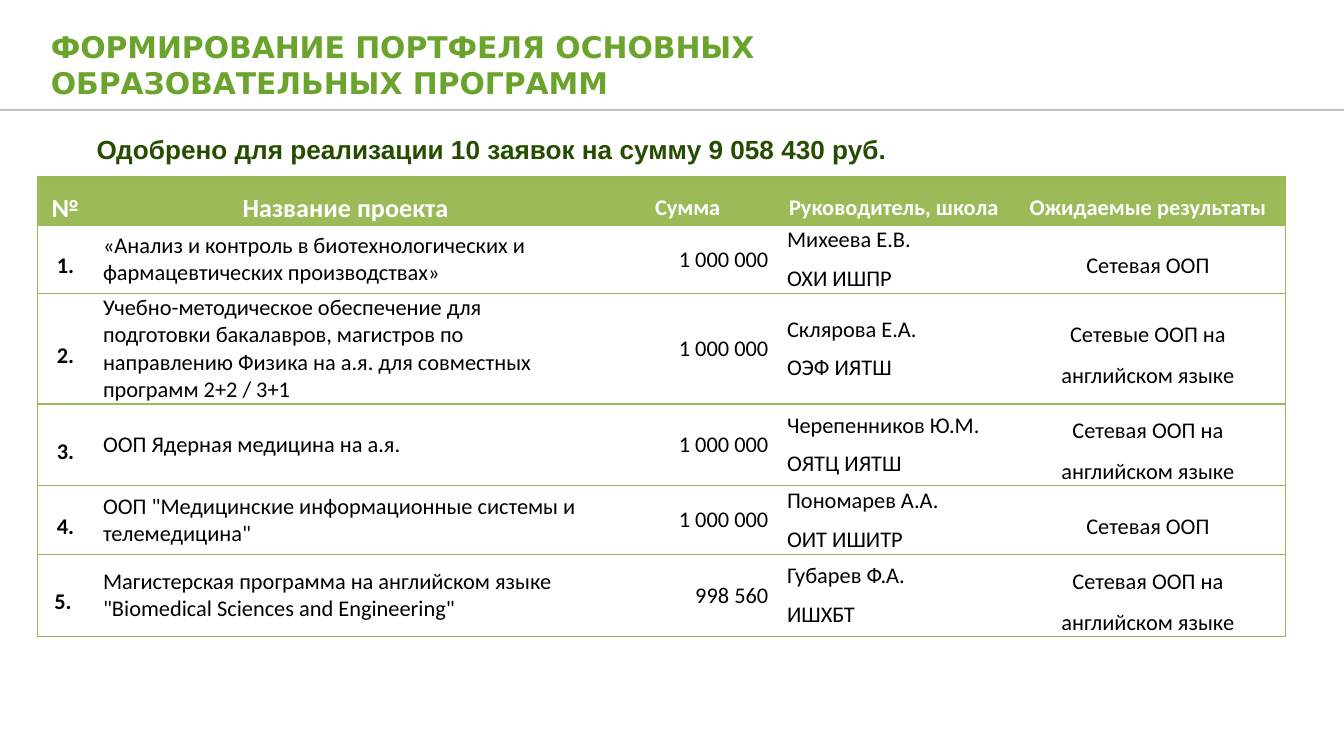
"""Build the slide listing the approved educational programme projects."""
import lxml.etree
import pptx
import pptx.dml.color
import pptx.enum.shapes
import pptx.enum.text
import pptx.oxml.ns
import pptx.util

color = pptx.dml.color.RGBColor.from_string
qn = pptx.oxml.ns.qn
ALIGN = pptx.enum.text.PP_ALIGN
MIDDLE = pptx.enum.text.MSO_ANCHOR.MIDDLE
BORDER = "98B955"


def add_span(para, text, size, font, hue, bold):
    span = para.add_run()
    span.text = text
    span.font.size = pptx.util.Pt(size)
    span.font.name = font
    span.font.bold = bold
    span.font.color.rgb = color(hue)


def add_border(cell, side, hue):
    line = lxml.etree.SubElement(cell._tc.get_or_add_tcPr(), qn("a:" + side))
    if hue:
        line.set("w", str(pptx.util.Pt(0.75)))
        fill = lxml.etree.SubElement(line, qn("a:solidFill"))
        lxml.etree.SubElement(fill, qn("a:srgbClr")).set("val", hue)
    else:
        lxml.etree.SubElement(line, qn("a:noFill"))


deck = pptx.Presentation()
deck.slide_width = pptx.util.Inches(10)
deck.slide_height = deck.slide_width * 9 // 16
percent = deck.slide_width / 100
page = deck.slides.add_slide(deck.slide_layouts[6])

headings = [
    ((2.8, 2.17, 69.3, 5.3), MIDDLE, 0, "ФОРМИРОВАНИЕ ПОРТФЕЛЯ ОСНОВНЫХ ОБРАЗОВАТЕЛЬНЫХ ПРОГРАММ",
     16, "DejaVu Sans", "6BA42C"),
    ((1.2, 9.45, 94.5, 3.4), pptx.enum.text.MSO_ANCHOR.TOP, 5,
     "Одобрено для реализации 10 заявок на сумму 9 058 430 руб.", 14, "Arial", "264C00"),
]
for place, anchor, indent, text, size, font, hue in headings:
    box = page.shapes.add_textbox(*[round(share * percent) for share in place])
    box.text_frame.word_wrap = True
    box.text_frame.vertical_anchor = anchor
    para = box.text_frame.paragraphs[0]
    para._p.get_or_add_pPr().set("marL", str(round(indent * percent)))
    add_span(para, text, size, font, hue, True)

rule_top = round(8.2 * percent)
rule = page.shapes.add_connector(
    pptx.enum.shapes.MSO_CONNECTOR.STRAIGHT, deck.slide_width, rule_top, 0, rule_top)
rule.line.color.rgb = color("BFBFBF")
rule.line.width = pptx.util.Pt(1)
lxml.etree.SubElement(rule._element.spPr, qn("a:effectLst"))

rows = [
    ("№", "Название проекта", "Сумма", "Руководитель, школа", "Ожидаемые результаты"),
    ("1.", "«Анализ и контроль в биотехнологических и фармацевтических производствах»",
     "1 000 000", "Михеева Е.В.\nОХИ ИШПР", "Сетевая ООП"),
    ("2.", "Учебно-методическое обеспечение для подготовки бакалавров, магистров по "
     "направлению Физика на а.я. для совместных программ 2+2 / 3+1",
     "1 000 000", "Склярова Е.А.\nОЭФ ИЯТШ", "Сетевые ООП на английском языке"),
    ("3.", "ООП Ядерная медицина на а.я.",
     "1 000 000", "Черепенников Ю.М.\nОЯТЦ ИЯТШ", "Сетевая ООП на английском языке"),
    ("4.", "ООП \"Медицинские информационные системы и телемедицина\"",
     "1 000 000", "Пономарев А.А.\nОИТ ИШИТР", "Сетевая ООП"),
    ("5. ", "Магистерская программа на английском языке \"Biomedical Sciences and Engineering\"",
     "998 560", "Губарев Ф.А.\nИШХБТ", "Сетевая ООП на английском языке"),
]
widths = [4.2, 37.5, 13.4, 17.3, 20.5]
heights = [3.6, 5.1, 8.2, 6.1, 5.1, 6.1]
aligns = [ALIGN.CENTER, ALIGN.LEFT, ALIGN.RIGHT, ALIGN.LEFT, ALIGN.CENTER]
table = page.shapes.add_table(
    len(rows), len(widths), round(2.77 * percent), round(13.16 * percent),
    round(sum(widths) * percent), round(sum(heights) * percent)).table
table.horz_banding = False
for column, width in zip(table.columns, widths):
    column.width = round(width * percent)
for row, height in zip(table.rows, heights):
    row.height = round(height * percent)

for r, texts in enumerate(rows):
    header = r == 0
    for c, text in enumerate(texts):
        cell = table.cell(r, c)
        cell.vertical_anchor = MIDDLE
        cell.margin_left = cell.margin_right = round(0.7 * percent)
        cell.margin_top = cell.margin_bottom = 0
        add_border(cell, "lnL", BORDER if c == 0 else None)
        add_border(cell, "lnR", BORDER if c == len(widths) - 1 else None)
        add_border(cell, "lnT", BORDER)
        add_border(cell, "lnB", BORDER)
        if header:
            cell.fill.solid()
            cell.fill.fore_color.rgb = color("9BBB59")
        else:
            cell.fill.background()
        for i, line in enumerate(text.split("\n")):
            para = cell.text_frame.paragraphs[0] if i == 0 else cell.text_frame.add_paragraph()
            para.alignment = ALIGN.CENTER if header else aligns[c]
            para.space_after = pptx.util.Pt(6)
            if para.alignment == ALIGN.CENTER:
                para.line_spacing = 1.5
            add_span(para, line, 14 if header and c < 2 else 12, "Calibri",
                     "FFFFFF" if header else "000000", header or c == 0)

deck.save("out.pptx")
